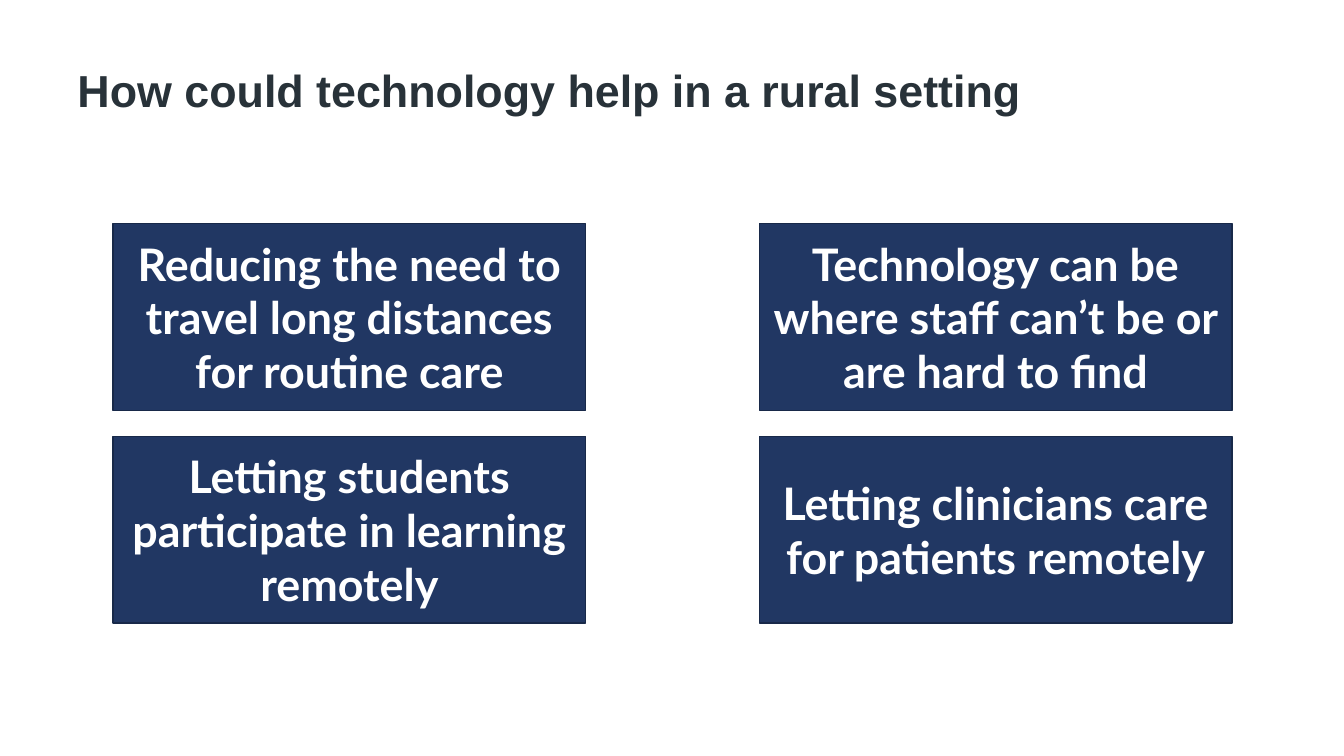
from pptx import Presentation
from pptx.dml.color import RGBColor
from pptx.enum.shapes import MSO_SHAPE
from pptx.enum.text import MSO_ANCHOR, PP_ALIGN
from pptx.util import Pt

PX = 9144
COLORS = {"navy": "213763", "edge": "182949", "ink": "283239", "white": "FFFFFF"}
LEFT, TOP = 112, 222
WIDE, HIGH = 469, 185
STEP_X, STEP_Y = 641, 211
CARDS = [
    ["Reducing the need to travel long distances for routine care",
     "Technology can be where staff can’t be or are hard to find"],
    ["Letting students participate in learning remotely",
     "Letting clinicians care for patients remotely"],
]


def color(name):
    return RGBColor.from_string(COLORS[name])


def place(*sizes):
    return [size * PX for size in sizes]


def write(shape, text, *, font, tint, align, space=1.0):
    frame = shape.text_frame
    frame.word_wrap = True
    frame.vertical_anchor = MSO_ANCHOR.MIDDLE
    line = frame.paragraphs[0]
    line.alignment = align
    line.line_spacing = space
    run = line.add_run()
    run.text = text
    run.font.name = font
    run.font.size = Pt(32)
    run.font.bold = True
    run.font.color.rgb = color(tint)


def add_title(slide, text):
    box = slide.shapes.add_textbox(*place(67, 30, 1200, 125))
    write(box, text, font="Arial", tint="ink", align=PP_ALIGN.LEFT, space=0.9)


def add_card(slide, text, left, top):
    card = slide.shapes.add_shape(MSO_SHAPE.RECTANGLE, *place(left, top, WIDE, HIGH))
    card.shadow.inherit = False
    card.fill.solid()
    card.fill.fore_color.rgb = color("navy")
    card.line.color.rgb = color("edge")
    card.line.width = Pt(1)
    write(card, text, font="Lato", tint="white", align=PP_ALIGN.CENTER)


def main():
    deck = Presentation()
    deck.slide_width, deck.slide_height = place(1333, 750)
    slide = deck.slides.add_slide(deck.slide_layouts[6])
    add_title(slide, "How could technology help in a rural setting")
    for row, texts in enumerate(CARDS):
        for col, text in enumerate(texts):
            add_card(slide, text, LEFT + col * STEP_X, TOP + row * STEP_Y)
    deck.save("out.pptx")


if __name__ == "__main__":
    main()
